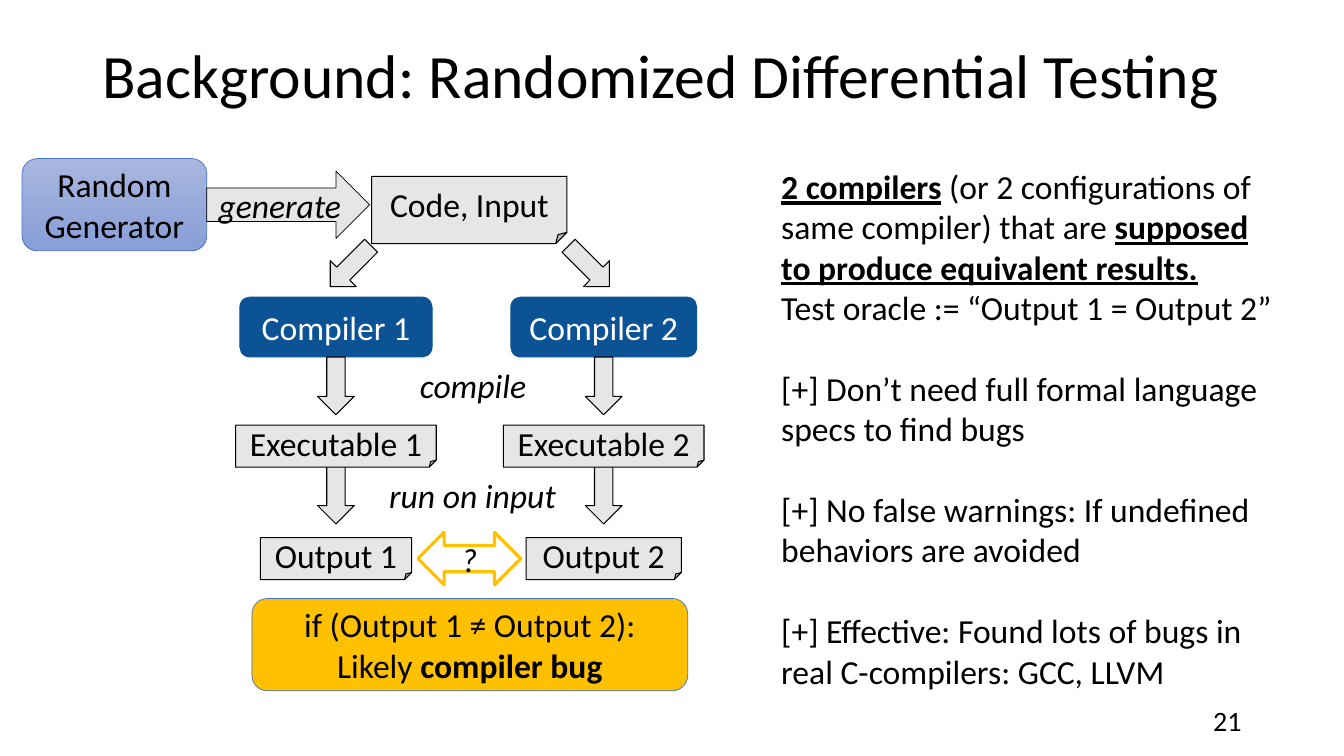
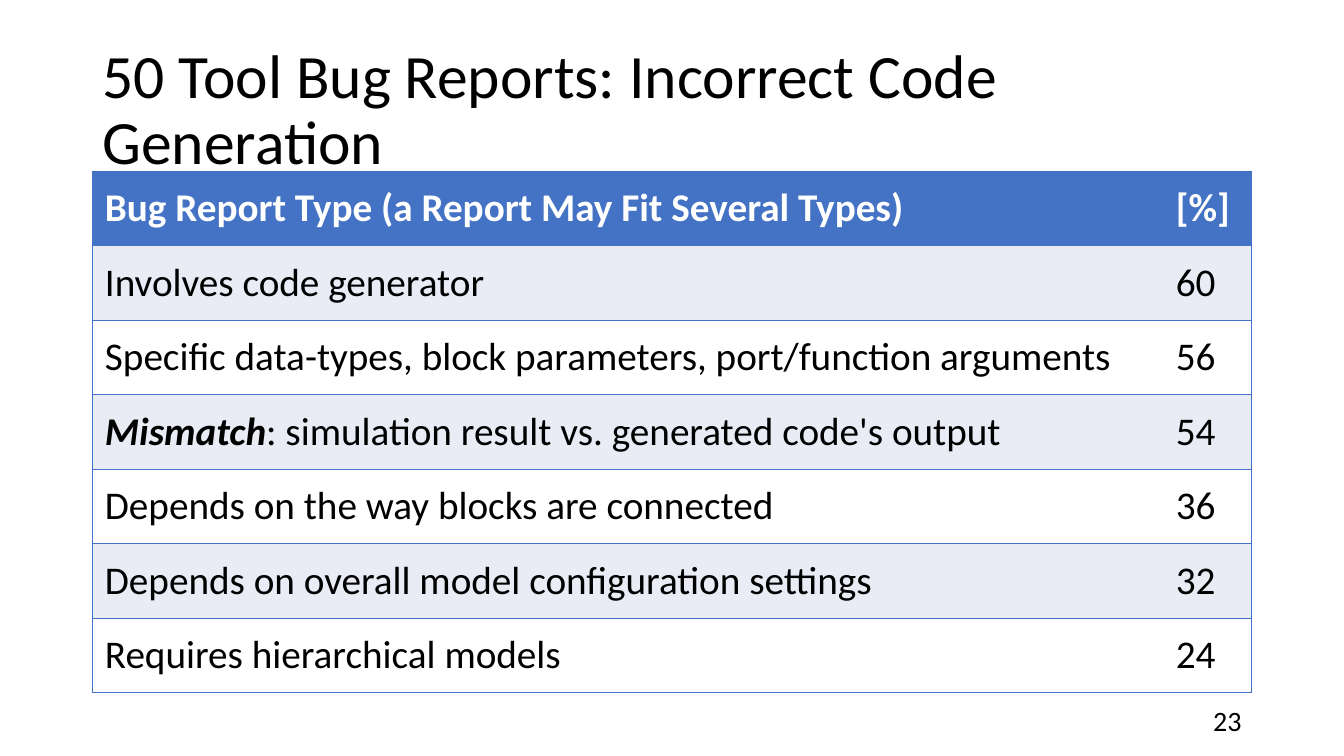
from lxml import etree
from pptx import Presentation, util as u
from pptx.dml.color import RGBColor
from pptx.enum import shapes, text
from pptx.oxml.ns import qn

FONT = "Calibri"
BLACK, WHITE = "000000", "FFFFFF"
GRAY, NAVY, BLUE, GOLD = "E7E6E6", "0B5394", "4472C4", "FFC000"
BAND = "E9EBF5"
GENERATOR_GRADIENT = ("A8B7DF", "889ED7")
INSET = 12
LEFT, CENTER, RIGHT = text.PP_ALIGN.LEFT, text.PP_ALIGN.CENTER, text.PP_ALIGN.RIGHT
TOP, MIDDLE = text.MSO_ANCHOR.TOP, text.MSO_ANCHOR.MIDDLE
PRESET = shapes.MSO_SHAPE

REPORT_ROWS = [
    ("Bug Report Type (a Report May Fit Several Types)", "[%]"),
    ("Involves code generator", "60"),
    ("Specific data-types, block parameters, port/function arguments", "56"),
    ([("Mismatch", "bi"), (": simulation result vs. generated code's output", "")], "54"),
    ("Depends on the way blocks are connected", "36"),
    ("Depends on overall model configuration settings", "32"),
    ("Requires hierarchical models", "24"),
]
SIDE_POINTS = [
    [("2 compilers", "bu"),
     (" (or 2 configurations of same compiler) that are ", ""),
     ("supposed to produce equivalent results.", "bu")],
    "Test oracle := “Output 1 = Output 2”",
    "[+] Don’t need full formal language specs to find bugs",
    "[+] No false warnings: If undefined behaviors are avoided",
    "[+] Effective: Found lots of bugs in real C-compilers: GCC, LLVM",
]


def px(length):
    return u.Emu(length * 9525)


def box(*lengths):
    return [px(length) for length in lengths]


def rgb(hex_color):
    return RGBColor.from_string(hex_color)


def write(frame, paragraphs, size=24, color=BLACK, align=LEFT, style=""):
    """Fill a frame; a paragraph is a string or a list of (text, style letters b, i, u)."""
    for index, content in enumerate(paragraphs):
        paragraph = frame.add_paragraph() if index else frame.paragraphs[0]
        paragraph.alignment = align
        font = paragraph.font
        font.name, font.size = FONT, u.Pt(size)
        font.color.rgb = rgb(color)
        font.bold, font.italic = "b" in style, "i" in style
        pieces = [(content, "")] if isinstance(content, str) else content
        for words, letters in pieces:
            run = paragraph.add_run()
            run.text = words
            if "b" in letters:
                run.font.bold = True
            if "i" in letters:
                run.font.italic = True
            if "u" in letters:
                run.font.underline = True


def set_insets(frame, inset):
    frame.margin_left = frame.margin_right = px(inset)
    frame.margin_top = frame.margin_bottom = px(inset)


def add_label(slide, bounds, paragraphs, anchor=MIDDLE, inset=None, **style):
    frame = slide.shapes.add_textbox(*box(*bounds)).text_frame
    frame.word_wrap = True
    frame.vertical_anchor = anchor
    if inset is not None:
        set_insets(frame, inset)
    write(frame, paragraphs, **style)
    return frame


def add_block(slide, preset, bounds, paragraphs=(), fill=GRAY, line=BLACK,
              line_width=0.75, inset=INSET, **style):
    shape = slide.shapes.add_shape(preset, *box(*bounds))
    shape.shadow.inherit = False
    if fill:
        shape.fill.solid()
        shape.fill.fore_color.rgb = rgb(fill)
    else:
        shape.fill.background()
    shape.line.color.rgb = rgb(line)
    shape.line.width = u.Pt(line_width)
    frame = shape.text_frame
    frame.word_wrap = True
    frame.vertical_anchor = MIDDLE
    if inset is not None:
        set_insets(frame, inset)
    write(frame, paragraphs, align=CENTER, **style)
    return shape


def add_titled_slide(presentation, title, number):
    slide = presentation.slides.add_slide(presentation.slide_layouts[5])
    placeholder = slide.shapes.title
    placeholder.left, placeholder.top, placeholder.width, placeholder.height = box(88, 38, 1104, 139)
    frame = placeholder.text_frame
    frame.word_wrap = True
    frame.auto_size = text.MSO_AUTO_SIZE.NONE
    frame.vertical_anchor = TOP
    write(frame, [title], size=44)
    frame.paragraphs[0].line_spacing = 0.9
    add_label(slide, (904, 667, 288, 38), [number], size=20, align=RIGHT)
    return slide


def add_branch(slide, number, center, toward_middle, widths):
    """Draw one compiler column; toward_middle is 1 or -1."""
    def column(preset, top, width, height, *args, **style):
        return add_block(slide, preset, (center - width / 2, top, width, height), *args, **style)

    compiler_width, executable_width, output_width = widths
    column(PRESET.DOWN_ARROW, 444, 35, 55)
    column(PRESET.FLOWCHART_ALTERNATE_PROCESS, 283, compiler_width, 57, [f"Compiler {number}"],
           fill=NAVY, line=NAVY, color=WHITE)
    column(PRESET.DOWN_ARROW, 340, 35, 55)
    for name, top, width in (("Executable", 405, executable_width), ("Output", 512, output_width)):
        column(PRESET.FOLDED_CORNER, top, width, 40, [f"{name} {number}"])
    entry = column(PRESET.DOWN_ARROW, 226, 35, 55)
    entry.left += px(14 * toward_middle)
    entry.rotation = 45 * toward_middle


def add_testing_slide(presentation):
    slide = add_titled_slide(presentation, "Background: Randomized Differential Testing", "21")
    add_block(slide, PRESET.FOLDED_CORNER, (354, 168, 186, 64), ["Code, Input"])
    generator = add_block(slide, PRESET.ROUNDED_RECTANGLE, (21, 151, 176, 88),
                          ["Random Generator"], line=BLUE, line_width=0.5, inset=None)
    generator.fill.gradient()
    generator.fill.gradient_angle = 270
    for stop, color in zip(generator.fill.gradient_stops, GENERATOR_GRADIENT):
        stop.color.rgb = rgb(color)
    add_block(slide, PRESET.RIGHT_ARROW, (197, 163, 155, 64), ["generate"],
              line_width=0.5, inset=None, style="i")

    add_branch(slide, 1, 320, 1, (183, 191, 144))
    add_branch(slide, 2, 575, -1, (177, 191, 148))
    add_label(slide, (385, 346, 131, 42), ["compile"], align=CENTER, style="i")
    add_label(slide, (324, 450, 252, 42), ["run on input"], align=CENTER, style="i")

    add_block(slide, PRESET.LEFT_RIGHT_ARROW, (398, 507, 98, 50), ["?"],
              fill=None, line=GOLD, line_width=2.25, style="i")
    add_block(slide, PRESET.ROUNDED_RECTANGLE, (240, 570, 415, 88),
              ["if (Output 1 ≠ Output 2):", [("Likely ", ""), ("compiler bug", "b")]],
              fill=GOLD, line=BLUE, line_width=0.5, inset=None)

    points = add_label(slide, (732, 146, 504, 518), SIDE_POINTS, anchor=TOP, inset=INSET)
    for paragraph in points.paragraphs[2:]:
        paragraph.space_before = u.Pt(29)


def set_borders(cell, sides):
    """Rule the named sides (L, R, T, B) and clear the others."""
    properties = cell._tc.get_or_add_tcPr()
    for side in "LRTB":
        line = etree.SubElement(properties, qn(f"a:ln{side}"), w=str(u.Pt(1)))
        if side in sides:
            fill = etree.SubElement(line, qn("a:solidFill"))
            etree.SubElement(fill, qn("a:srgbClr"), val=BLUE)
        else:
            etree.SubElement(line, qn("a:noFill"))


def add_report_table(slide, rows, left, top, widths, row_height):
    bounds = box(left, top, sum(widths), row_height * len(rows))
    table = slide.shapes.add_table(len(rows), len(widths), *bounds).table
    table.horz_banding = False
    for column, width in zip(table.columns, widths):
        column.width = px(width)
    for row_index, values in enumerate(rows):
        table.rows[row_index].height = px(row_height)
        is_header = row_index == 0
        fill = BLUE if is_header else BAND if row_index % 2 else WHITE
        for column_index, value in enumerate(values):
            cell = table.cell(row_index, column_index)
            set_borders(cell, "TBR" if column_index else "TBL")
            cell.fill.solid()
            cell.fill.fore_color.rgb = rgb(fill)
            cell.vertical_anchor = MIDDLE
            set_insets(cell, INSET)
            write(cell.text_frame, [value], size=28, color=WHITE if is_header else BLACK,
                  style="b" if is_header else "")


def add_reports_slide(presentation):
    slide = add_titled_slide(presentation, "50 Tool Bug Reports: Incorrect Code Generation", "23")
    add_report_table(slide, REPORT_ROWS, 88, 163, (1020, 84), 71)


def main():
    presentation = Presentation()
    presentation.slide_width, presentation.slide_height = box(1280, 720)
    add_testing_slide(presentation)
    add_reports_slide(presentation)
    presentation.save("out.pptx")


if __name__ == "__main__":
    main()
